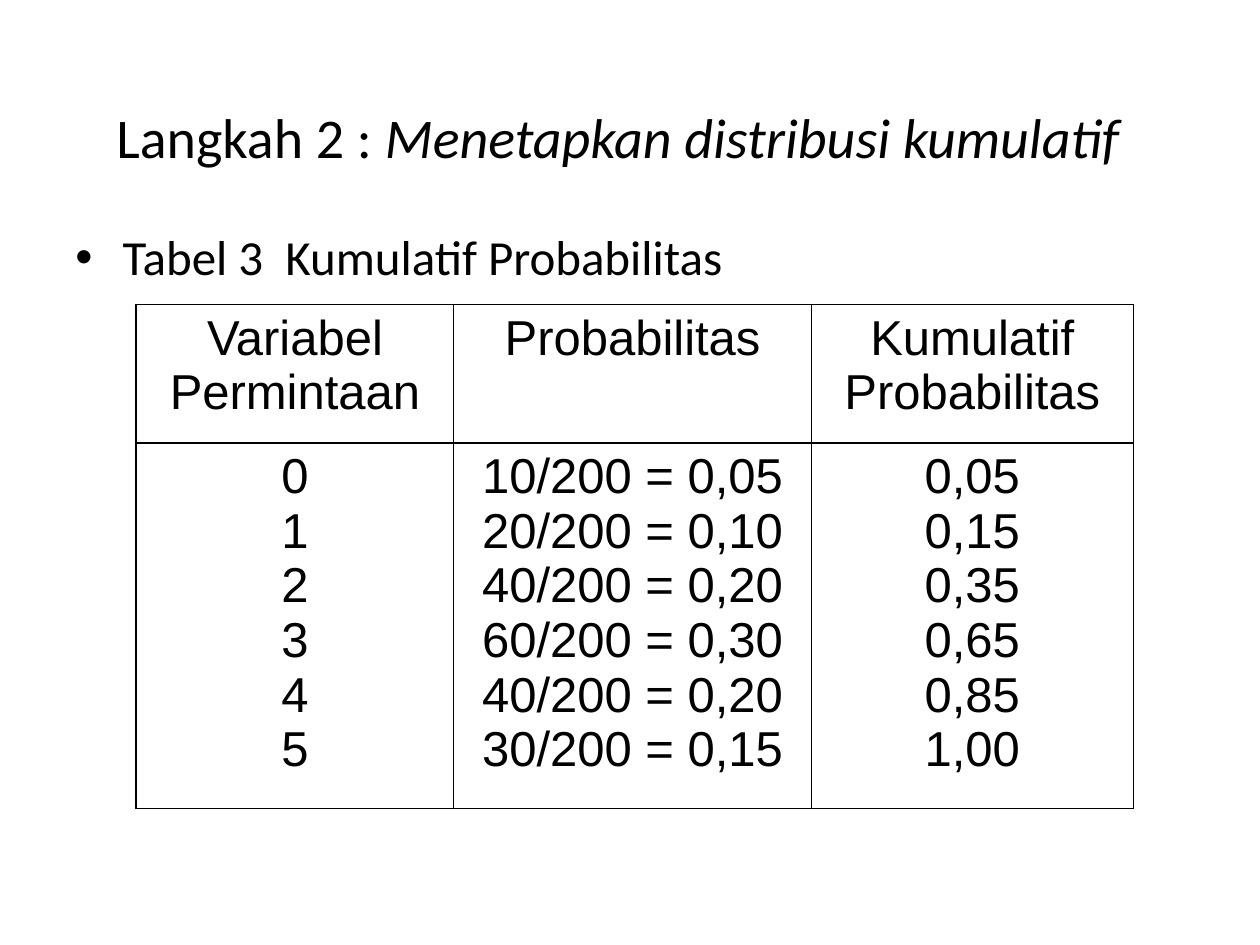
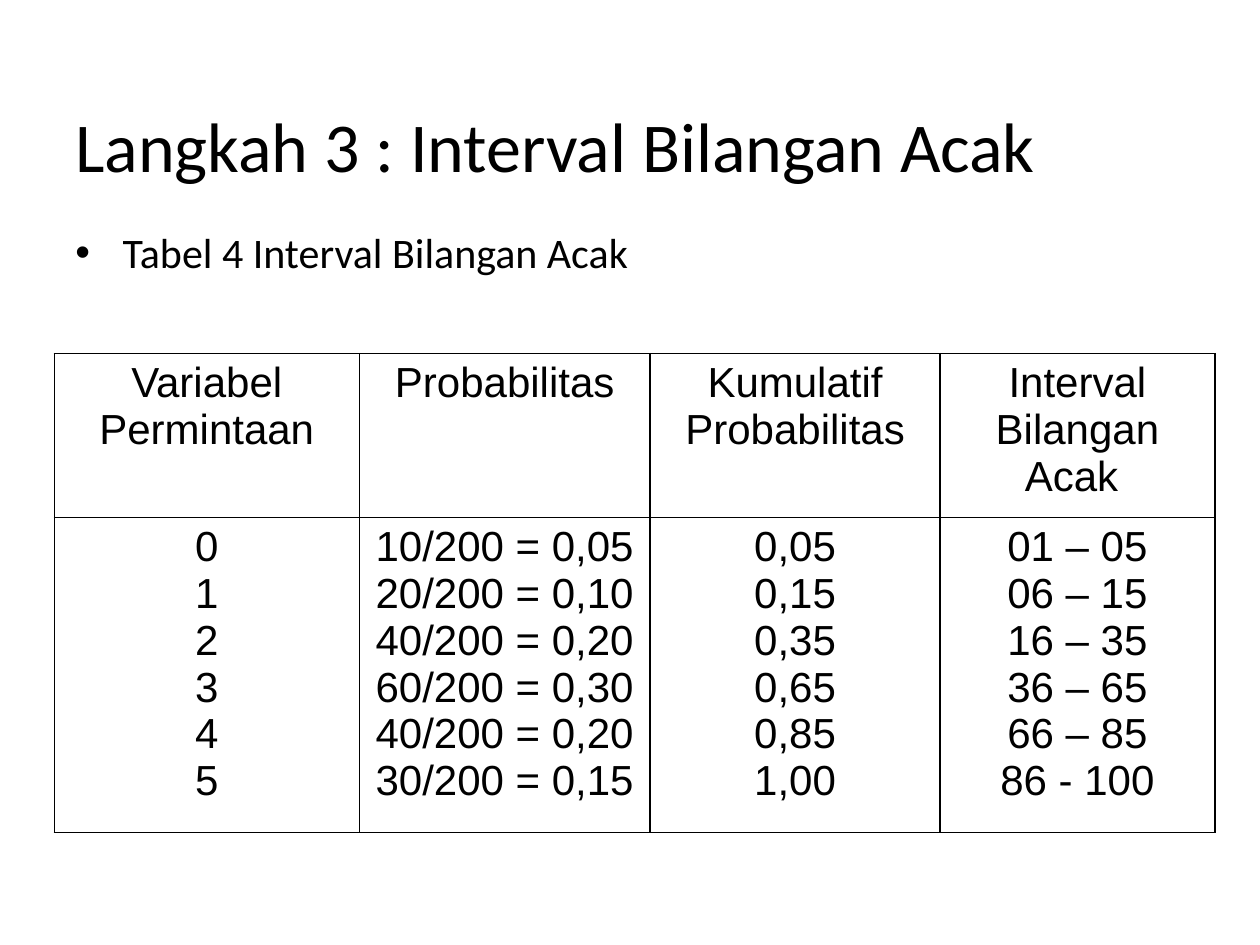
from dataclasses import dataclass

from lxml import etree
from pptx import Presentation
from pptx.dml.color import RGBColor
from pptx.enum.text import MSO_ANCHOR, PP_ALIGN
from pptx.oxml.ns import qn
from pptx.util import Pt

LEFT, CENTER = PP_ALIGN.LEFT, PP_ALIGN.CENTER
TOP, MIDDLE = MSO_ANCHOR.TOP, MSO_ANCHOR.MIDDLE
BLANK = 6


@dataclass(frozen=True)
class Theme:
    ink: str = "000000"
    accent: str = "800080"
    text_font: str = "Calibri"
    table_font: str = "Arial"
    huge: int = 60
    title: int = 40
    long_title: int = 32
    large: int = 28
    medium: int = 24
    border: int = 1
    indent: int = 27


VARIABLE = (["Variabel", "Permintaan"], [str(n) for n in range(6)])
PROBABILITY = (["Probabilitas"],
               ["10/200 = 0,05", "20/200 = 0,10", "40/200 = 0,20",
                "60/200 = 0,30", "40/200 = 0,20", "30/200 = 0,15"])
CUMULATIVE = (["Kumulatif", "Probabilitas"],
              ["0,05", "0,15", "0,35", "0,65", "0,85", "1,00"])
INTERVAL = (["Interval Bilangan Acak "],
            ["01 – 05", "06 – 15", "16 – 35", "36 – 65", "66 – 85", "86 - 100"])


class Deck:
    def __init__(self, theme):
        self.theme = theme
        self.prs = Presentation()
        self.prs.slide_width, self.prs.slide_height = Pt(720), Pt(540)
        self.s = None

    def new_slide(self):
        self.s = self.prs.slides.add_slide(self.prs.slide_layouts[BLANK])

    def add_run(self, p, text, size, font, color=None, italic=False):
        r = p.add_run()
        r.text = text
        values = {"name": font, "size": Pt(size), "bold": False, "italic": italic}
        for name, value in values.items():
            setattr(r.font, name, value)
        r.font.color.rgb = RGBColor.from_string(color or self.theme.ink)

    def text_box(self, at, anchor):
        """Add a wrapping box and return its first paragraph."""
        tf = self.s.shapes.add_textbox(*map(Pt, at)).text_frame
        tf.word_wrap = True
        tf.vertical_anchor = anchor
        return tf.paragraphs[0]

    def title(self, top, height, runs, align=LEFT):
        p = self.text_box((36, top, 648, height), MIDDLE)
        p.alignment = align
        for text, size, style in runs:
            self.add_run(p, text, size, self.theme.text_font, **style)

    def bullet(self, text, size, width):
        p = self.text_box((36, 126, width, 356.4), TOP)
        indent = Pt(self.theme.indent)
        pPr = p._p.get_or_add_pPr()
        pPr.set("marL", str(indent))
        pPr.set("indent", str(-indent))
        etree.SubElement(pPr, qn("a:buFont"), typeface="Arial")
        etree.SubElement(pPr, qn("a:buChar"), char="•")
        self.add_run(p, text, size, self.theme.text_font)

    def cell_borders(self, cell):
        tcPr = cell._tc.get_or_add_tcPr()
        for side in ("lnL", "lnR", "lnT", "lnB"):
            ln = etree.SubElement(tcPr, qn(f"a:{side}"), w=str(Pt(self.theme.border)))
            fill = etree.SubElement(ln, qn("a:solidFill"))
            etree.SubElement(fill, qn("a:srgbClr"), val=self.theme.ink)

    def fill_cell(self, cell, lines, size):
        self.cell_borders(cell)
        cell.fill.background()
        tf = cell.text_frame
        for i, line in enumerate(lines):
            p = tf.add_paragraph() if i else tf.paragraphs[0]
            p.alignment = CENTER
            self.add_run(p, line, size, self.theme.table_font)

    def table(self, left, top, widths, heights, columns, size):
        """Draw columns, each given as its heading lines and its value lines."""
        frame = self.s.shapes.add_table(
            len(heights), len(widths), Pt(left), Pt(top), Pt(sum(widths)), Pt(sum(heights)))
        table = frame.table
        table.first_row = table.horz_banding = False
        for row, height in zip(table.rows, heights):
            row.height = Pt(height)
        for c, (width, column) in enumerate(zip(widths, columns)):
            table.columns[c].width = Pt(width)
            for r, lines in enumerate(column):
                self.fill_cell(table.cell(r, c), lines, size)


def cumulative_slide(deck):
    t = deck.theme
    deck.new_slide()
    deck.title(21.6, 90, [
        ("Langkah 2 : ", t.long_title, {}),
        ("Menetapkan distribusi kumulatif", t.long_title, {"italic": True}),
        (" ", t.huge, {"color": t.accent}),
    ], CENTER)
    deck.bullet("Tabel 3  Kumulatif Probabilitas", t.large, 641.5)
    deck.table(77.8, 174, [181.5, 204.3, 184], [79.2, 194],
               [VARIABLE, PROBABILITY, CUMULATIVE], t.large)


def interval_slide(deck):
    t = deck.theme
    deck.new_slide()
    deck.title(54, 57.6, [("Langkah 3 : Interval Bilangan Acak", t.title, {})])
    deck.bullet("Tabel 4 Interval Bilangan Acak", t.medium, 624)
    deck.table(31, 202, [174.3, 166.2, 165.7, 157], [87.5, 168],
               [VARIABLE, PROBABILITY, CUMULATIVE, INTERVAL], t.medium)


def main():
    deck = Deck(Theme())
    cumulative_slide(deck)
    interval_slide(deck)
    deck.prs.save("out.pptx")


if __name__ == "__main__":
    main()
